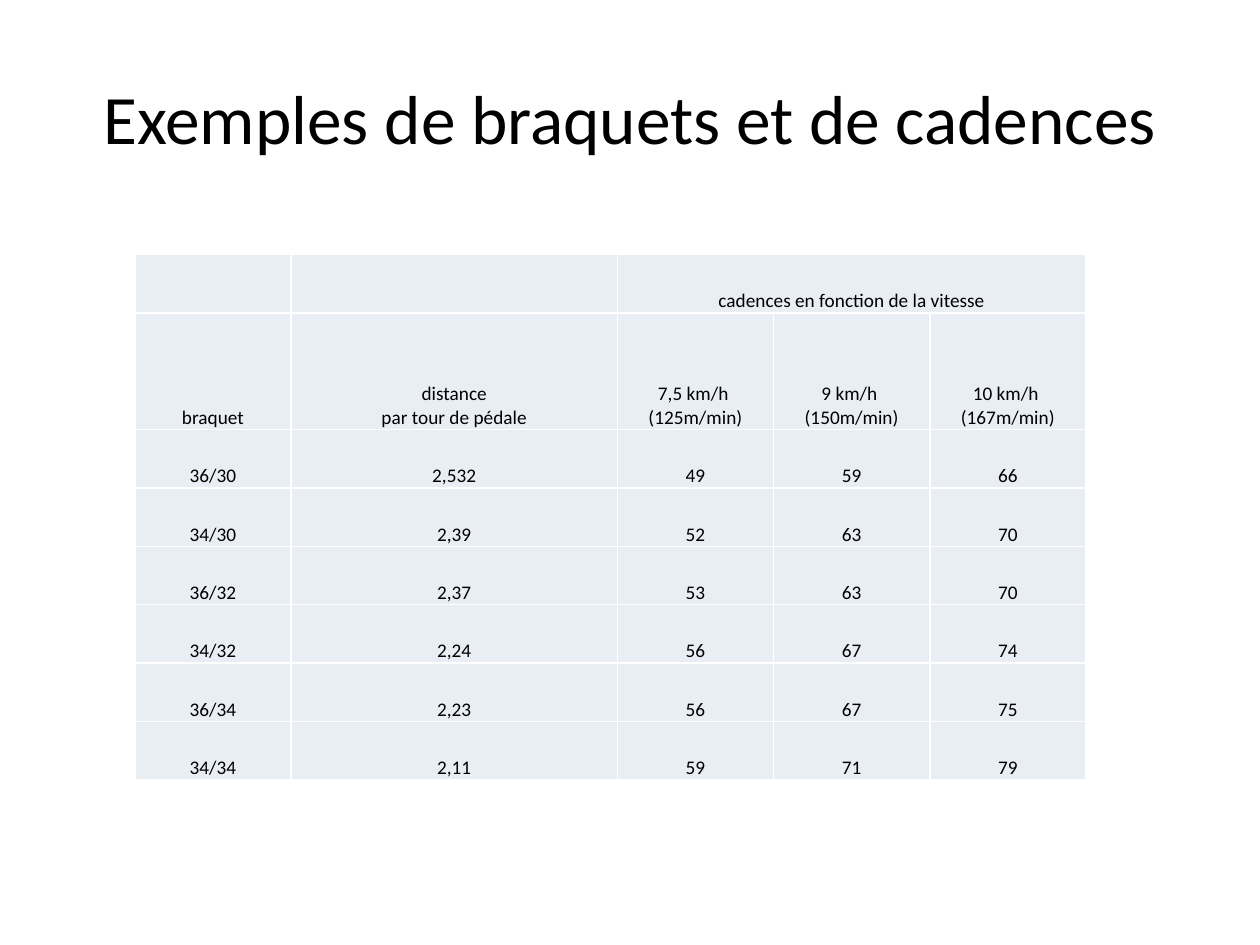
from dataclasses import dataclass

from lxml import etree
from pptx import Presentation
from pptx import util as u
from pptx.dml.color import RGBColor
from pptx.enum import text
from pptx.oxml.ns import qn


@dataclass(frozen=True)
class Theme:
    font: str = "Calibri"
    ink: str = "000000"
    cell: str = "E9EDF4"
    border: str = "FFFFFF"
    border_width: float = 1
    title_size: float = 39.6
    cell_size: float = 11


class SlideBuilder:
    def __init__(self, slide, theme):
        self.slide = slide
        self.theme = theme

    def wording(self, frame, words, size):
        paragraph = frame.paragraphs[0]
        paragraph.text = words
        paragraph.alignment = text.PP_ALIGN.CENTER
        for run in paragraph.runs:
            run.font.name = self.theme.font
            run.font.size = u.Pt(size)
            run.font.color.rgb = RGBColor.from_string(self.theme.ink)

    def title(self, words, left, top, width, height):
        heading = self.slide.shapes.title
        heading.left, heading.top = u.Inches(left), u.Inches(top)
        heading.width, heading.height = u.Inches(width), u.Inches(height)
        heading.text_frame.vertical_anchor = text.MSO_ANCHOR.MIDDLE
        self.wording(heading.text_frame, words, self.theme.title_size)

    def border(self, cell):
        properties = cell._tc.get_or_add_tcPr()
        for side in ("lnL", "lnR", "lnT", "lnB"):
            line = etree.SubElement(properties, qn(f"a:{side}"),
                                    w=str(u.Pt(self.theme.border_width)))
            fill = etree.SubElement(line, qn("a:solidFill"))
            etree.SubElement(fill, qn("a:srgbClr"), val=self.theme.border)

    def cell(self, cell, words):
        self.border(cell)
        cell.fill.solid()
        cell.fill.fore_color.rgb = RGBColor.from_string(self.theme.cell)
        cell.margin_left = cell.margin_right = cell.margin_top = u.Inches(0.01)
        cell.margin_bottom = 0
        cell.vertical_anchor = text.MSO_ANCHOR.BOTTOM
        self.wording(cell.text_frame, words, self.theme.cell_size)

    def table(self, rows, left, top, widths, heights):
        table = self.slide.shapes.add_table(
            len(rows), len(widths), u.Inches(left), u.Inches(top),
            u.Inches(sum(widths)), u.Inches(sum(heights))).table
        table.first_row = table.horz_banding = False
        for column, width in zip(table.columns, widths):
            column.width = u.Inches(width)
        for row, height, entries in zip(table.rows, heights, rows):
            row.height = u.Inches(height)
            for cell, words in zip(row.cells, entries):
                self.cell(cell, words)
        return table


def main():
    deck = Presentation()
    deck.slide_width, deck.slide_height = u.Inches(10), u.Inches(7.5)
    builder = SlideBuilder(deck.slides.add_slide(deck.slide_layouts[5]), Theme())
    builder.title("Exemples de braquets et de cadences", 0.5, 0.3, 9, 1.25)

    cadences = [
        ("", "", "cadences en fonction de la vitesse", "", ""),
        ("braquet", "distance\vpar tour de pédale", "7,5 km/h \v(125m/min)",
         "9 km/h \v(150m/min)", "10 km/h \v(167m/min)"),
        ("36/30", "2,532", "49", "59", "66"),
        ("34/30", "2,39", "52", "63", "70"),
        ("36/32", "2,37", "53", "63", "70"),
        ("34/32", "2,24", "56", "67", "74"),
        ("36/34", "2,23", "56", "67", "75"),
        ("34/34", "2,11", "59", "71", "79"),
    ]
    row_height = 4.17 / 9
    heights = [row_height, 2 * row_height] + [row_height] * 6
    table = builder.table(cadences, 1.07, 2.02, [1.24, 2.59] + [1.24] * 3, heights)
    table.cell(0, 2).merge(table.cell(0, 4))

    deck.save("out.pptx")


if __name__ == "__main__":
    main()
